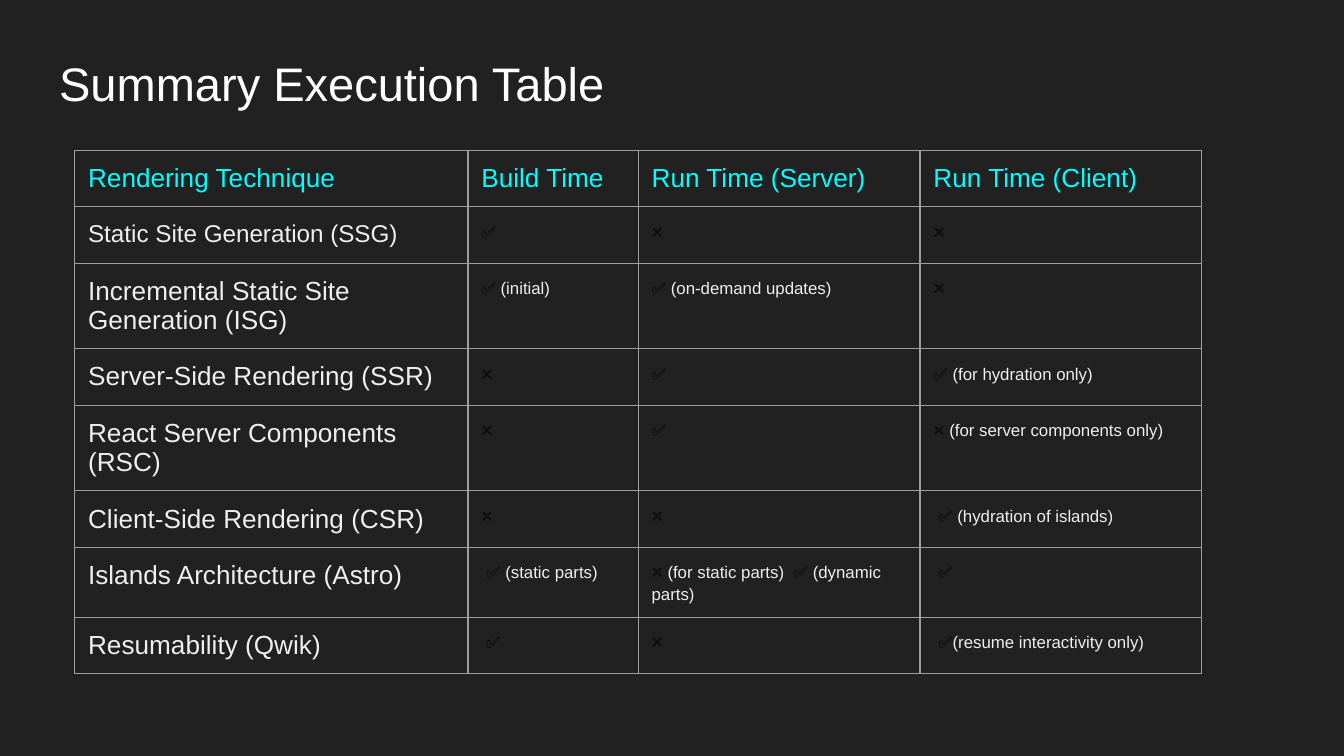
from itertools import cycle

from lxml.etree import SubElement
from pptx import Presentation
from pptx.dml.color import RGBColor
from pptx.enum.text import MSO_ANCHOR as Anchor, PP_ALIGN as Align
from pptx.oxml.ns import qn
from pptx.util import Pt

BACKGROUND = RGBColor(0x21, 0x21, 0x21)
WHITE = RGBColor(0xFF, 0xFF, 0xFF)
CYAN = RGBColor(0x00, 0xFF, 0xFF)
LIGHT = RGBColor(0xEE, 0xEE, 0xEE)
DARK = RGBColor(0x0E, 0x0E, 0x0E)
BORDER = RGBColor(0x9E, 0x9E, 0x9E)

COLUMN_WIDTHS = (210.7, 91.2, 151, 151)
ROW_HEIGHT = 30.2
HEADERS = ("Rendering Technique", "Build Time", "Run Time (Server)", "Run Time (Client)")
YES, NO = ("✅",), ("❌",)
INDENTED_YES = (" ✅",)
TECHNIQUES = (
    ("Static Site Generation (SSG)", 13, YES, NO, NO),
    ("Incremental Static Site Generation (ISG)", 14,
     ("✅ ", "(initial)"), ("✅ ", "(on-demand updates)"), NO),
    ("Server-Side Rendering (SSR)", 14, NO, YES, ("✅ ", "(for hydration only)")),
    ("React Server Components (RSC)", 14, NO, YES, ("❌", " (for server components only)")),
    ("Client-Side Rendering (CSR)", 14, NO, NO, (" ✅ ", "(hydration of islands)")),
    ("Islands Architecture (Astro)", 14, (" ✅", " (static parts)"),
     ("❌ ", "(for static parts) ", " ✅ ", "(dynamic parts)"), INDENTED_YES),
    ("Resumability (Qwik)", 14, INDENTED_YES, NO, (" ✅", "(resume interactivity only)")),
)


class SlideBuilder:
    font = "Arial"
    inset = Pt(7.2)

    def __init__(self, slide):
        self.slide = slide
        fill = slide.background.fill
        fill.solid()
        fill.fore_color.rgb = BACKGROUND

    def set_insets(self, holder):
        holder.margin_left = holder.margin_right = self.inset
        holder.margin_top = holder.margin_bottom = self.inset

    def add_run(self, paragraph, text, size, color):
        run = paragraph.add_run()
        run.text = text
        run.font.name = self.font
        run.font.size = Pt(size)
        run.font.color.rgb = color

    def title(self, text, left, top, width, height):
        shape = self.slide.shapes.title
        shape.left, shape.top = Pt(left), Pt(top)
        shape.width, shape.height = Pt(width), Pt(height)
        frame = shape.text_frame
        self.set_insets(frame)
        frame.vertical_anchor = Anchor.MIDDLE
        paragraph = frame.paragraphs[0]
        paragraph.alignment = Align.LEFT
        self.add_run(paragraph, text, 25.2, WHITE)

    def table(self, left, top, widths, row_height, row_count):
        table = self.slide.shapes.add_table(
            row_count, len(widths), Pt(left), Pt(top),
            Pt(sum(widths)), Pt(row_height * row_count)).table
        table.first_row = table.horz_banding = False
        for column, width in zip(table.columns, widths):
            column.width = Pt(width)
        for row in table.rows:
            row.height = Pt(row_height)
        return table

    def cell(self, cell, runs, line_spacing=None):
        self.set_insets(cell)
        self.borders(cell)
        cell.fill.background()
        paragraph = cell.text_frame.paragraphs[0]
        paragraph.line_spacing = line_spacing
        for text, size, color in runs:
            self.add_run(paragraph, text, size, color)

    def borders(self, cell):
        properties = cell._tc.get_or_add_tcPr()
        for side in ("a:lnL", "a:lnR", "a:lnT", "a:lnB"):
            line = SubElement(properties, qn(side), w=str(Pt(0.75)))
            fill = SubElement(line, qn("a:solidFill"))
            SubElement(fill, qn("a:srgbClr"), val=str(BORDER))


def main():
    presentation = Presentation()
    presentation.slide_width, presentation.slide_height = Pt(720), Pt(405)
    builder = SlideBuilder(presentation.slides.add_slide(presentation.slide_layouts[5]))
    builder.title("Summary Execution Table", 24.5, 22, 671, 45)

    table = builder.table(40, 80.6, COLUMN_WIDTHS, ROW_HEIGHT, len(TECHNIQUES) + 1)
    for column, header in enumerate(HEADERS):
        builder.cell(table.cell(0, column), [(header, 14, CYAN)])
    for row, (name, size, *stages) in enumerate(TECHNIQUES, start=1):
        builder.cell(table.cell(row, 0), [(name, size, LIGHT)])
        for column, texts in enumerate(stages, start=1):
            runs = [(text, 9, color) for text, color in zip(texts, cycle((DARK, LIGHT)))]
            builder.cell(table.cell(row, column), runs, 1.15)

    presentation.save("out.pptx")


if __name__ == "__main__":
    main()
